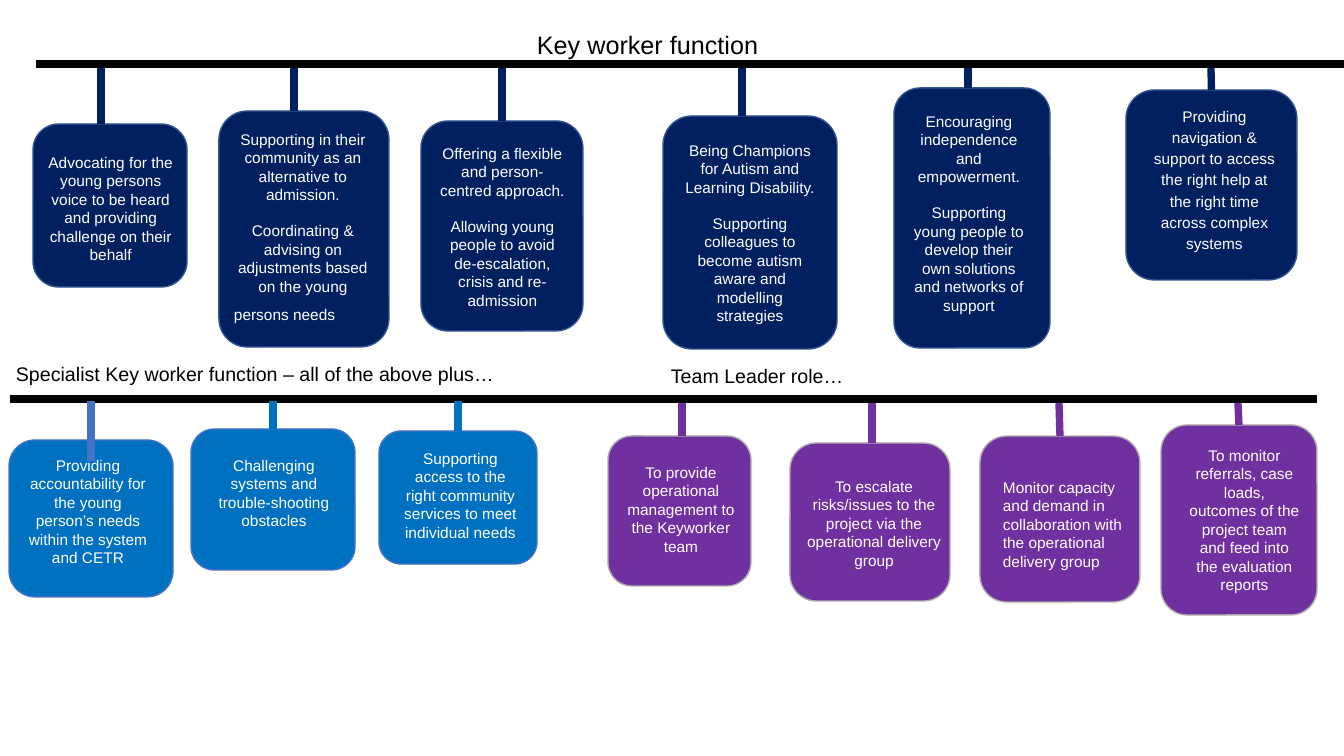
"""Builds a slide of key worker, specialist and team leader duties."""
from typing import NamedTuple

from lxml.etree import SubElement
from pptx import Presentation
from pptx.dml.color import RGBColor
from pptx.enum.shapes import MSO_CONNECTOR, MSO_SHAPE
from pptx.enum.text import MSO_ANCHOR, PP_ALIGN
from pptx.oxml.ns import qn
from pptx.util import Emu, Pt


class Theme:
    """Holds the colours and type sizes."""
    font = "Arial"
    black = RGBColor(0, 0, 0)
    white = RGBColor(255, 255, 255)
    navy = RGBColor(0x00, 0x20, 0x60)
    navy_edge = RGBColor(0x32, 0x54, 0x91)
    blue = RGBColor(0x00, 0x70, 0xC0)
    blue_edge = RGBColor(0x44, 0x72, 0xC4)
    purple = RGBColor(0x70, 0x30, 0xA0)
    purple_edge = RGBColor(0xAF, 0xAB, 0xAB)
    title = Pt(18)
    heading = Pt(14)
    body = Pt(11)
    rail = Pt(5.25)
    edge = Pt(1)


class Duty(NamedTuple):
    """Describes a card, its stem and the area of its text."""
    box: tuple
    stem: int
    text_area: tuple
    paragraphs: tuple
    formats: tuple = ({}, {"space_before": Pt(12.5)},
                      {"space_before": Pt(7), "alignment": PP_ALIGN.LEFT})
    overlap: int = 0
    stem_color: RGBColor = None


class Group(NamedTuple):
    """Describes a family of duties hanging from one rail."""
    fill: RGBColor
    edge: RGBColor
    stem_top: int
    duties: tuple


KEY_WORKER = Group(Theme.navy, Theme.navy_edge, 68, (
    Duty((33, 124, 154, 163), 101, (42, 153, 138),
         ("Advocating for the young persons voice to be heard and providing "
          "challenge on their behalf",)),
    Duty((219, 111, 170, 236), 294, (234, 130, 138),
         ("Supporting in their community as an alternative to admission.",
          "Coordinating & advising on adjustments based on the young",
          "persons needs")),
    Duty((421, 121, 162, 210), 502, (439, 144, 127),
         ("Offering a flexible and person-centred approach.",
          "Allowing young people to avoid de-escalation, crisis and "
          "re-admission")),
    Duty((663, 116, 174, 233), 742, (682, 141, 136),
         ("Being Champions for Autism and Learning Disability.",
          "Supporting colleagues to become autism aware and modelling "
          "strategies")),
    Duty((894, 88, 156, 260), 968, (911, 112, 116),
         ("Encouraging independence and empowerment.",
          "Supporting young people to develop their own solutions and "
          "networks of support")),
    Duty((1126, 90, 171, 190), 1211, (1151, 104, 127),
         ("Providing navigation & support to access the right help at the "
          "right time across complex systems",), ({"line_spacing": 1.15},)),
))

SPECIALIST = Group(Theme.blue, Theme.blue_edge, 401, (
    Duty((9, 440, 164, 157), 91, (25, 456, 126),
         ("Providing accountability for the young person’s needs within the "
          "system and CETR",), overlap=21, stem_color=Theme.blue_edge),
    Duty((191, 429, 164, 141), 273, (215, 456, 118),
         ("Challenging systems and trouble-shooting obstacles",)),
    Duty((379, 431, 158, 133), 458, (400, 449, 121),
         ("Supporting access to the right community services to meet "
          "individual needs",)),
))

TEAM_LEADER = Group(Theme.purple, Theme.purple_edge, 403, (
    Duty((608, 436, 143, 150), 682, (618, 463, 126),
         ("To provide operational management to the Keyworker team",)),
    Duty((790, 443, 160, 158), 872, (806, 477, 137),
         ("To escalate risks/issues to the project via the operational "
          "delivery group",)),
    Duty((980, 436, 160, 166), 1059, (1003, 478, 129),
         ("Monitor capacity and demand in collaboration with the operational "
          "delivery group",), ({"alignment": PP_ALIGN.LEFT},)),
    Duty((1161, 425, 156, 190), 1238, (1189, 446, 111),
         ("To monitor referrals, case loads, outcomes of the project team "
          "and feed into the evaluation reports",)),
))


def px(length):
    """Turns pixels into EMU."""
    return Emu(round(length * 914400 / 100.8))


def apply(target, values):
    """Sets each named attribute on the target."""
    for name, value in values.items():
        setattr(target, name, value)


def write(paragraph, words, size, color, **layout):
    """Fills a paragraph with formatted words."""
    run = paragraph.add_run()
    run.text = words
    apply(run.font, {"name": Theme.font, "size": size})
    run.font.color.rgb = color
    apply(paragraph, layout)


def add_line(slide, start, end, color):
    """Draws a thick straight connector without a shadow."""
    line = slide.shapes.add_connector(
        MSO_CONNECTOR.STRAIGHT, *map(px, start + end))
    line.line.width = Theme.rail
    line.line.color.rgb = color
    SubElement(line._element.spPr, qn("a:effectLst"))
    return line


def add_heading(slide, box, words, size):
    """Adds a black heading above a rail."""
    frame = slide.shapes.add_textbox(*map(px, box)).text_frame
    frame.word_wrap = True
    write(frame.paragraphs[0], words, size, Theme.black)


def add_card(slide, duty, group):
    """Adds a rounded card with its text in the given area."""
    left, top, width, height = duty.box
    text_left, text_top, text_width = duty.text_area
    card = slide.shapes.add_shape(
        MSO_SHAPE.ROUNDED_RECTANGLE, *map(px, duty.box))
    card.shadow.inherit = False
    card.fill.solid()
    card.fill.fore_color.rgb = group.fill
    card.line.color.rgb = group.edge
    card.line.width = Theme.edge
    corner = 0.0488 * min(width, height)
    right_gap = left + width - text_left - text_width
    apply(card.text_frame, {
        "word_wrap": True,
        "vertical_anchor": MSO_ANCHOR.TOP,
        "margin_left": px(max(0, text_left - left - corner)),
        "margin_right": px(max(0, right_gap - corner)),
        "margin_top": px(max(0, text_top - top - corner)),
        "margin_bottom": 0,
    })
    for index, (words, layout) in enumerate(zip(duty.paragraphs, duty.formats)):
        frame = card.text_frame
        paragraph = frame.add_paragraph() if index else frame.paragraphs[0]
        write(paragraph, words, Theme.body, Theme.white,
              **{"alignment": PP_ALIGN.CENTER, **layout})
    return card


def add_duty(slide, duty, group):
    """Hangs a card from its rail by a stem."""
    left, top, width, _ = duty.box
    card = add_card(slide, duty, group)
    stem = add_line(slide, (duty.stem, group.stem_top),
                    (duty.stem, top + duty.overlap),
                    duty.stem_color or group.fill)
    if not duty.overlap and abs(left + width / 2 - duty.stem) <= 1:
        stem.end_connect(card, 0)


def main():
    """Builds and saves the slide."""
    deck = Presentation()
    apply(deck, {"slide_width": px(1344), "slide_height": px(756)})
    slide = deck.slides.add_slide(deck.slide_layouts[6])
    add_line(slide, (36, 64), (1344, 64), Theme.black)
    add_line(slide, (10, 399), (1317, 399), Theme.black)
    add_heading(slide, (527, 24, 258, 40), "Key worker function", Theme.title)
    add_heading(slide, (6, 357, 535, 34),
                "Specialist Key worker function – all of the above plus…",
                Theme.heading)
    add_heading(slide, (661, 359, 521, 34), "Team Leader role…", Theme.heading)
    for group in (KEY_WORKER, SPECIALIST, TEAM_LEADER):
        for duty in group.duties:
            add_duty(slide, duty, group)
    deck.save("out.pptx")


if __name__ == "__main__":
    main()
